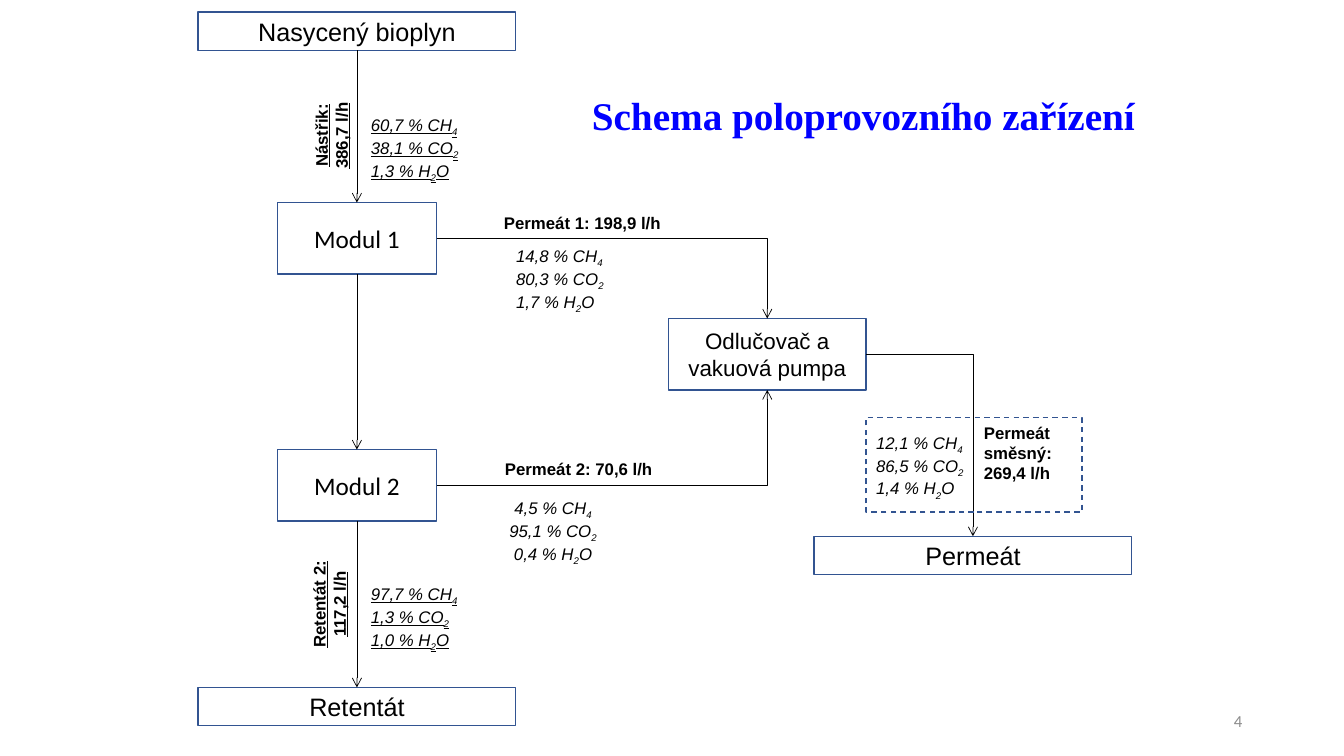
from lxml import etree
from pptx import Presentation
from pptx.dml.color import RGBColor
from pptx.enum.dml import MSO_LINE
from pptx.enum.shapes import MSO_CONNECTOR, MSO_SHAPE
from pptx.enum.text import MSO_ANCHOR, PP_ALIGN
from pptx.oxml.ns import qn
from pptx.util import Inches, Pt

RECTANGLE = MSO_SHAPE.RECTANGLE
STRAIGHT, ELBOW = MSO_CONNECTOR.STRAIGHT, MSO_CONNECTOR.ELBOW
LEFT, CENTER, RIGHT = PP_ALIGN.LEFT, PP_ALIGN.CENTER, PP_ALIGN.RIGHT
TOP_ANCHOR, MIDDLE = MSO_ANCHOR.TOP, MSO_ANCHOR.MIDDLE
DASH = MSO_LINE.DASH
TOP, BOTTOM, RIGHT_SIDE = 0, 2, 3

BLACK, GREY, BLUE, OUTLINE = "000000", "8C8C8C", "0000FF", "325491"
LABEL = {"name": "Arial", "size": Pt(12), "bold": True}
MIXTURE = {"name": "Arial", "size": Pt(12), "italic": True}
STREAM = {"name": "Arial", "size": Pt(18)}
MODULE = {"name": "Calibri", "size": Pt(18)}
PUMP = {"name": "Arial", "size": Pt(16)}
TITLE = {"name": "Times New Roman", "size": Pt(28), "bold": True}
NUMBER = {"name": "Calibri", "size": Pt(12)}
UNDERLINED = {"underline": True}

GASES = (("CH", "4", ""), ("CO", "2", ""), ("H", "2", "O"))
MODULE_AXIS, PUMP_AXIS, PERMEATE_AXIS = 3.54, 7.61, 9.65
STREAM_SIZE, MODULE_SIZE, PUMP_SIZE = (3.15, 0.38), (1.58, 0.71), (1.96, 0.71)

NODES = {
    "feed": ("Nasycený bioplyn", MODULE_AXIS, 0.12, STREAM_SIZE, STREAM),
    "module 1": ("Modul 1", MODULE_AXIS, 2.01, MODULE_SIZE, MODULE),
    "module 2": ("Modul 2", MODULE_AXIS, 4.46, MODULE_SIZE, MODULE),
    "pump": ("Odlučovač a vakuová pumpa", PUMP_AXIS, 3.16, PUMP_SIZE, PUMP),
    "permeate": ("Permeát", PERMEATE_AXIS, 5.32, STREAM_SIZE, STREAM),
    "retentate": ("Retentát", MODULE_AXIS, 6.82, STREAM_SIZE, STREAM),
}
FLOWS = (
    ("feed", BOTTOM, "module 1", TOP, STRAIGHT),
    ("module 1", BOTTOM, "module 2", TOP, STRAIGHT),
    ("module 2", BOTTOM, "retentate", TOP, STRAIGHT),
    ("module 1", RIGHT_SIDE, "pump", TOP, ELBOW),
    ("module 2", RIGHT_SIDE, "pump", BOTTOM, ELBOW),
    ("pump", RIGHT_SIDE, "permeate", TOP, ELBOW),
)
COMPOSITIONS = (
    (("60,7", "38,1", "1,3"), (3.58, 1.09, 1.11, 0.71), LEFT, UNDERLINED),
    (("97,7", "1,3", "1,0"), (3.58, 5.74, 1.11, 0.71), LEFT, UNDERLINED),
    (("14,8", "80,3", "1,7"), (5.02, 2.39, 1.11, 0.71), LEFT, {}),
    (("4,5", "95,1", "0,4"), (4.94, 4.89, 1.09, 0.71), CENTER, {}),
    (("12,1", "86,5", "1,4"), (8.59, 4.24, 1.11, 0.71), LEFT, {}),
)
SIDE_LABELS = (
    ("Nástřik: 386,7 l/h", (2.74, 1.09, 1.1, 0.51)),
    ("Retentát 2: 117,2 l/h", (2.67, 5.74, 1.2, 0.51)),
)
PERMEATE_LABELS = (
    ("Permeát 1: 198,9 l/h", (4.9, 2.06, 1.77, 0.3)),
    ("Permeát 2: 70,6 l/h", (4.91, 4.5, 1.68, 0.3)),
)


def color(hex_value):
    """Return the colour for a hex string."""
    return RGBColor.from_string(hex_value)


def add_span(para, text, style, hex_value=BLACK):
    """Add a formatted run to a paragraph."""
    span = para.add_run()
    span.text = text
    for name, value in style.items():
        setattr(span.font, name, value)
    span.font.color.rgb = color(hex_value)
    return span


def write(box, lines, style, align=LEFT, anchor=TOP_ANCHOR, hex_value=BLACK, wrap=True):
    """Fill a shape with one paragraph for each line of spans."""
    frame = box.text_frame
    frame.word_wrap = wrap
    frame.vertical_anchor = anchor
    for index, spans in enumerate(lines):
        para = frame.add_paragraph() if index else frame.paragraphs[0]
        para.alignment = align
        for text, baseline in spans:
            span = add_span(para, text, style, hex_value)
            if baseline:
                span._r.get_or_add_rPr().set("baseline", str(baseline))


def add_label(page, place, lines, style, **layout):
    """Add a text box with plain lines at a place."""
    box = page.shapes.add_textbox(*map(Inches, place))
    write(box, [[(line, 0)] for line in lines], style, **layout)
    return box


def add_outline(page, place):
    """Add an unfilled rectangle with the diagram's outline."""
    box = page.shapes.add_shape(RECTANGLE, *map(Inches, place))
    box.shadow.inherit = False
    box.fill.background()
    box.line.color.rgb = color(OUTLINE)
    box.line.width = Pt(1)
    return box


def add_node(page, text, axis, top, size, style):
    """Add a process box centred on a vertical axis."""
    width, height = size
    box = add_outline(page, (axis - width / 2, top, width, height))
    write(box, [[(text, 0)]], style, align=CENTER, anchor=MIDDLE)
    return box


def add_flow(page, source, source_side, target, target_side, kind):
    """Join two process boxes with an arrow."""
    flow = page.shapes.add_connector(kind, 0, 0, 0, 0)
    flow.begin_connect(source, source_side)
    flow.end_connect(target, target_side)
    flow.line.color.rgb = color(BLACK)
    flow.line.width = Pt(0.5)
    properties = flow._element.spPr
    if kind == ELBOW:
        properties.find(qn("a:prstGeom")).set("prst", "bentConnector2")
    etree.SubElement(flow.line._get_or_add_ln(), qn("a:tailEnd"), type="arrow")
    etree.SubElement(properties, qn("a:effectLst"))


def add_composition(page, shares, place, align, extra):
    """List the share of each gas in a stream."""
    lines = [
        [(f"{share} % {symbol}", 0), (count, -25000)] + ([(rest, 0)] if rest else [])
        for share, (symbol, count, rest) in zip(shares, GASES)
    ]
    box = page.shapes.add_textbox(*map(Inches, place))
    write(box, lines, {**MIXTURE, **extra}, align=align, wrap=False)


def add_diagram(page):
    """Draw the process boxes and the flows between them."""
    nodes = {name: add_node(page, *node) for name, node in NODES.items()}
    for source, source_side, target, target_side, kind in FLOWS:
        add_flow(page, nodes[source], source_side, nodes[target], target_side, kind)


def add_stream_data(page):
    """Add flow rates and gas shares beside the flows."""
    for text, place in SIDE_LABELS:
        label = add_label(page, place, [text], {**LABEL, **UNDERLINED}, align=CENTER)
        label.rotation = 270
    for text, place in PERMEATE_LABELS:
        add_label(page, place, [text], LABEL, wrap=False)
    add_label(page, (9.66, 4.14, 1.06, 0.71), ["Permeát", "směsný: 269,4 l/h"], LABEL)
    for composition in COMPOSITIONS:
        add_composition(page, *composition)
    add_outline(page, (8.59, 4.14, 2.14, 0.94)).line.dash_style = DASH


def add_title(page, place):
    """Place and format the slide title."""
    title = page.shapes.title
    title.left, title.top, title.width, title.height = map(Inches, place)
    write(title, [[("Schema poloprovozního zařízení", 0)]], TITLE, hex_value=BLUE)


def main():
    """Build the deck and save it."""
    deck = Presentation()
    deck.slide_width, deck.slide_height = Inches(13.33), Inches(7.5)
    page = deck.slides.add_slide(deck.slide_layouts[5])
    add_title(page, (5.77, 0.86, 5.9, 0.57))
    add_diagram(page)
    add_stream_data(page)
    add_label(page, (9.42, 6.95, 3, 0.4), ["4"], NUMBER, align=RIGHT,
              anchor=MIDDLE, hex_value=GREY)
    deck.save("out.pptx")


if __name__ == "__main__":
    main()
